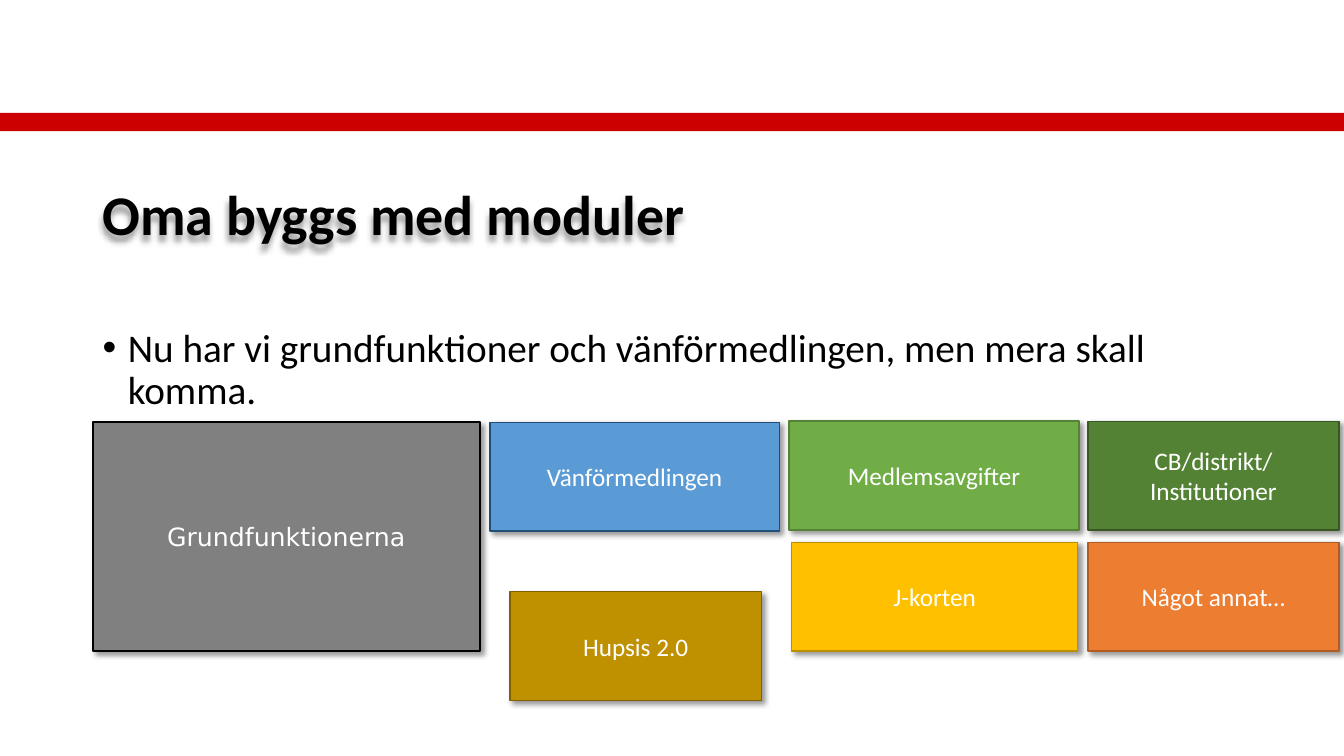
from dataclasses import dataclass

from lxml.etree import SubElement
from pptx import Presentation
from pptx.dml.color import RGBColor
from pptx.enum.shapes import MSO_SHAPE
from pptx.enum.text import MSO_ANCHOR, PP_ALIGN
from pptx.oxml.ns import qn
from pptx.shapes.autoshape import Shape
from pptx.slide import Slide
from pptx.text.text import _Paragraph
from pptx.util import Inches, Pt


@dataclass(frozen=True)
class Module:
    label: str
    left: float
    top: float
    width: float
    fill: str
    line: str
    line_width: float = 1
    height: float = 1.08
    font: str = "Calibri"


UPPER_ROW, LOWER_ROW = 4.18, 5.38
RIGHT_COLUMN, NARROW = 10.79, 2.49
MODULES = [
    Module("Grundfunktionerna", 0.92, 4.19, 3.84, "808080", "000000", 1.5, 2.27, "DejaVu Sans"),
    Module("Vänförmedlingen", 4.86, 4.19, 2.87, "5B9BD5", "1F4E79"),
    Module("Medlemsavgifter", 7.83, UPPER_ROW, 2.87, "70AD47", "548235", 1.5),
    Module("J-korten", 7.85, LOWER_ROW, 2.84, "FFC000", "BD8E00"),
    Module("Hupsis 2.0", 5.06, 5.87, NARROW, "BF9000", "806000"),
    Module("CB/distrikt/Institutioner", RIGHT_COLUMN, UPPER_ROW, NARROW, "548235", "385723"),
    Module("Något annat…", RIGHT_COLUMN, LOWER_ROW, NARROW, "ED7D31", "AF5C24"),
]


def color(value: str) -> RGBColor:
    return RGBColor.from_string(value)


def add_shadow(shape: Shape, distance: float, angle: int) -> None:
    """Give the shape a soft black shadow."""
    shape.shadow.inherit = False
    effects = shape._element.spPr.find(qn("a:effectLst"))
    shadow = SubElement(effects, qn("a:outerShdw"), blurRad=str(Pt(4)), dist=str(Pt(distance)),
                        dir=str(angle * 60000), algn="tl", rotWithShape="0")
    tint = SubElement(shadow, qn("a:srgbClr"), val="000000")
    SubElement(tint, qn("a:alpha"), val="40000")


def style_font(paragraph: _Paragraph, size: float, ink: str, name: str = "Calibri") -> None:
    paragraph.font.size = Pt(size)
    paragraph.font.name = name
    paragraph.font.color.rgb = color(ink)


def add_bullet(paragraph: _Paragraph) -> None:
    properties = paragraph._p.get_or_add_pPr()
    properties.set("marL", str(Inches(0.25)))
    properties.set("indent", str(Inches(-0.25)))
    SubElement(properties, qn("a:buFont"), typeface="Arial")
    SubElement(properties, qn("a:buChar"), char="•")


def add_text(page: Slide, text: str, top: float, height: float, size: float,
             anchor: MSO_ANCHOR, bulleted: bool = False) -> Shape:
    box = page.shapes.add_textbox(Inches(0.92), Inches(top), Inches(11.5), Inches(height))
    box.text_frame.word_wrap = True
    box.text_frame.vertical_anchor = anchor
    paragraph = box.text_frame.paragraphs[0]
    paragraph.text = text
    if bulleted:
        add_bullet(paragraph)
    paragraph.line_spacing = 0.9
    style_font(paragraph, size, "000000")
    return box


def add_module(page: Slide, module: Module) -> None:
    box = page.shapes.add_shape(MSO_SHAPE.RECTANGLE, Inches(module.left), Inches(module.top),
                                Inches(module.width), Inches(module.height))
    box.fill.solid()
    box.fill.fore_color.rgb = color(module.fill)
    box.line.color.rgb = color(module.line)
    box.line.width = Pt(module.line_width)
    add_shadow(box, 3, 45)
    box.text_frame.word_wrap = True
    box.text_frame.vertical_anchor = MSO_ANCHOR.MIDDLE
    paragraph = box.text_frame.paragraphs[0]
    paragraph.text = module.label
    paragraph.alignment = PP_ALIGN.CENTER
    style_font(paragraph, 18, "FFFFFF", module.font)


def main() -> None:
    """Build the slide about the modules of Oma."""
    deck = Presentation()
    deck.slide_width, deck.slide_height = Inches(13.33), Inches(7.5)
    page = deck.slides.add_slide(deck.slide_layouts[6])

    band = page.shapes.add_shape(MSO_SHAPE.RECTANGLE, 0, Inches(1.12), deck.slide_width, Inches(0.18))
    band.fill.solid()
    band.fill.fore_color.rgb = color("CC0000")
    band.line.fill.background()
    band.shadow.inherit = False

    title = add_text(page, "Oma byggs med moduler", 1.43, 1.45, 40, MSO_ANCHOR.MIDDLE)
    title.text_frame.paragraphs[0].font.bold = True
    add_shadow(title, 4, 110)
    add_text(page, "Nu har vi grundfunktioner och vänförmedlingen, men mera skall komma.",
             3.21, 3.55, 28, MSO_ANCHOR.TOP, bulleted=True)

    for module in MODULES:
        add_module(page, module)
    deck.save("out.pptx")


if __name__ == "__main__":
    main()
